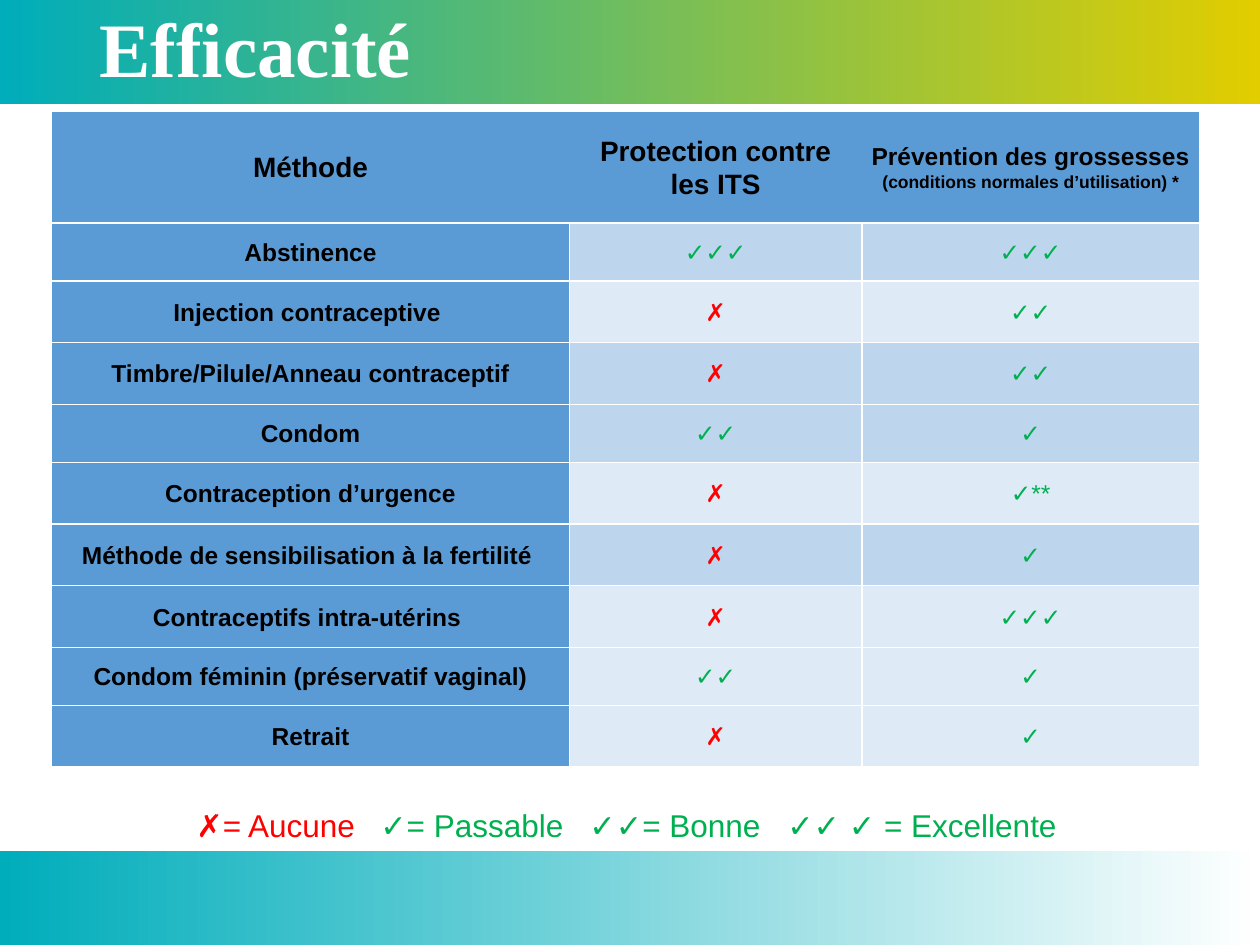
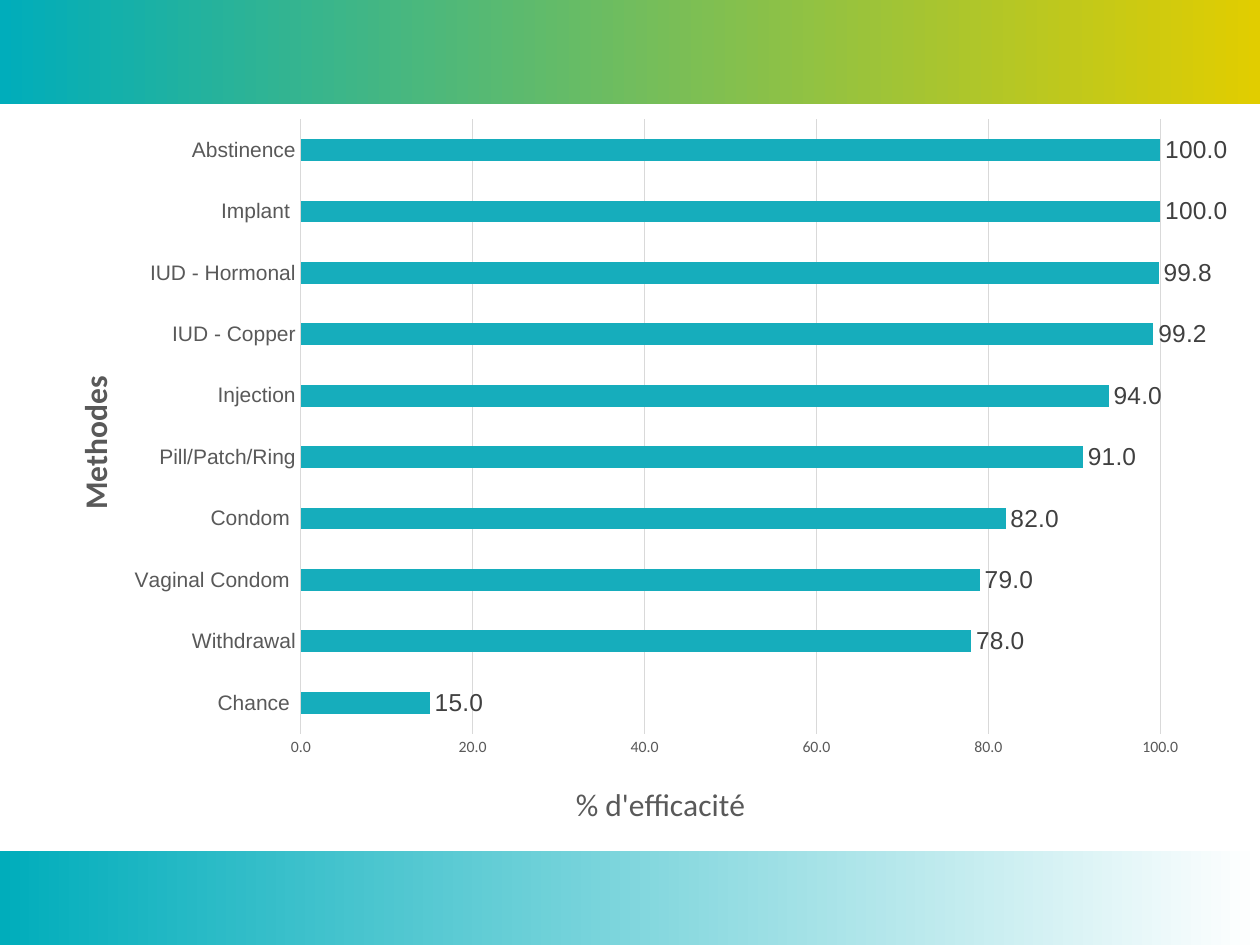
from dataclasses import dataclass
from lxml import etree
from pptx import Presentation
from pptx.chart.data import CategoryChartData
from pptx.dml.color import RGBColor
from pptx.enum import chart as charts, shapes, text
from pptx.oxml import ns, parse_xml
from pptx.util import Inches, Pt

TEAL, YELLOW, WHITE, BLACK = "00ADBB", "E1CD00", "FFFFFF", "000000"
BLUE, BLUE_MID, BLUE_PALE = "5B9BD5", "BDD6EE", "DEEAF6"
GREEN, RED = "00B050", "FF0000"
BAR_TEAL, GREY, LABEL_GREY, GRID_GREY = "16ADBC", "595959", "404040", "D9D9D9"
BODY, HEADING, CHART_FONT = "Arial", "Times New Roman", "Calibri"
CENTER = text.PP_ALIGN.CENTER


@dataclass(frozen=True)
class Band:
    top: float
    height: float
    end_color: str


@dataclass(frozen=True)
class Span:
    words: str
    size: float = 14
    color: str = BLACK
    bold: bool = False
    font: str = BODY


@dataclass(frozen=True)
class Method:
    name: str
    infection_mark: str
    pregnancy_mark: str
    fill: str
    height: float = 0.49


BANDS = [Band(0, 0.83, YELLOW), Band(6.75, 0.75, WHITE)]
COLUMN_WIDTHS = [4.11, 2.32, 2.68]
HEADER_HEIGHT = 0.89
HEADERS = [
    [Span("Méthode", 16, bold=True)],
    [Span("Protection contre les ITS", 16, bold=True)],
    [Span("Prévention des grossesses", bold=True),
     Span("(conditions normales d’utilisation) *", 10, bold=True)],
]
METHODS = [
    Method("Abstinence", "✓✓✓", "✓✓✓", BLUE_MID, 0.46),
    Method("Injection contraceptive ", "✗", "✓✓", BLUE_PALE),
    Method("Timbre/Pilule/Anneau contraceptif", "✗", "✓✓", BLUE_MID),
    Method("Condom", "✓✓", "✓", BLUE_MID, 0.46),
    Method("Contraception d’urgence", "✗", "✓**", BLUE_PALE),
    Method("Méthode de sensibilisation à la fertilité ", "✗", "✓", BLUE_MID),
    Method("Contraceptifs intra-utérins ", "✗", "✓✓✓", BLUE_PALE),
    Method("Condom féminin (préservatif vaginal)", "✓✓", "✓", BLUE_PALE, 0.46),
    Method("Retrait", "✗", "✓", BLUE_PALE),
]
LEGEND = [("✗= Aucune", 1.05), ("✓= Passable", 2.51),
          ("✓✓= Bonne", 4.17), ("✓✓ ✓ = Excellente", 5.74)]
EFFECTIVENESS = {
    "Chance ": 15, "Withdrawal": 78, "Vaginal Condom ": 79, "Condom ": 82,
    "Pill/Patch/Ring": 91, "Injection": 94, "IUD - Copper": 99.2,
    "IUD - Hormonal": 99.8, "Implant ": 100, "Abstinence": 100,
}


def rgb(color: str) -> RGBColor:
    return RGBColor.from_string(color)


def mark_color(mark: str) -> str:
    return RED if mark.startswith("✗") else GREEN


def style_font(font, size: float, color: str, name: str, bold: bool = False) -> None:
    font.size, font.name, font.bold = Pt(size), name, bold
    font.color.rgb = rgb(color)


def add_span(para, span: Span) -> None:
    run = para.add_run()
    run.text = span.words
    style_font(run.font, span.size, span.color, span.font, span.bold)


def add_bands(page) -> None:
    for band in BANDS:
        box = page.shapes.add_shape(shapes.MSO_SHAPE.RECTANGLE, 0, Inches(band.top),
                                    Inches(10), Inches(band.height))
        box.shadow.inherit = False
        box.line.fill.background()
        box.fill.gradient()
        box.fill.gradient_angle = 0
        for stop, color in zip(box.fill.gradient_stops, (TEAL, band.end_color)):
            stop.color.rgb = rgb(color)


def add_page(deck):
    page = deck.slides.add_slide(deck.slide_layouts[6])
    add_bands(page)
    return page


def add_text_box(page, left: float, top: float, width: float, height: float):
    box = page.shapes.add_textbox(*map(Inches, (left, top, width, height)))
    box.text_frame.word_wrap = True
    return box.text_frame


def add_title(page, words: str) -> None:
    frame = add_text_box(page, 0.69, 0, 8.62, 0.83)
    frame.vertical_anchor = text.MSO_ANCHOR.MIDDLE
    para = frame.paragraphs[0]
    para.line_spacing = 0.9
    add_span(para, Span(words, 44, WHITE, True, HEADING))


def set_borders(cell, hidden: set[str]) -> None:
    properties = cell._tc.get_or_add_tcPr()
    for side in "LRTB":
        line = etree.SubElement(properties, ns.qn(f"a:ln{side}"), w=str(Pt(1)))
        if side in hidden:
            etree.SubElement(line, ns.qn("a:noFill"))
        else:
            fill = etree.SubElement(line, ns.qn("a:solidFill"))
            etree.SubElement(fill, ns.qn("a:srgbClr"), val=WHITE)


def fill_cell(cell, spans: list[Span], color: str, hidden: set[str] = frozenset()) -> None:
    set_borders(cell, hidden)
    cell.fill.solid()
    cell.fill.fore_color.rgb = rgb(color)
    cell.vertical_anchor = text.MSO_ANCHOR.MIDDLE
    cell.margin_left = cell.margin_right = Inches(0.07)
    cell.margin_top = cell.margin_bottom = 0
    para = cell.text_frame.paragraphs[0]
    para.alignment, para.line_spacing = CENTER, 1.07
    for index, span in enumerate(spans):
        if index:
            para.add_line_break()
        add_span(para, span)


def add_method_table(page) -> None:
    heights = [HEADER_HEIGHT] + [method.height for method in METHODS]
    table = page.shapes.add_table(len(heights), len(COLUMN_WIDTHS), Inches(0.41), Inches(0.88),
                                  Inches(sum(COLUMN_WIDTHS)), Inches(sum(heights))).table
    for column, width in zip(table.columns, COLUMN_WIDTHS):
        column.width = Inches(width)
    for row, height in zip(table.rows, heights):
        row.height = Inches(height)
    for index, (spans, hidden) in enumerate(zip(HEADERS, ("R", "LR", "L"))):
        fill_cell(table.cell(0, index), spans, BLUE, set(hidden))
    for index, method in enumerate(METHODS, 1):
        fill_cell(table.cell(index, 0), [Span(method.name, bold=True)], BLUE)
        for column, mark in enumerate((method.infection_mark, method.pregnancy_mark), 1):
            fill_cell(table.cell(index, column), [Span(mark, color=mark_color(mark))], method.fill)


def add_legend(page) -> None:
    frame = add_text_box(page, 0.41, 6.33, 9.11, 0.43)
    frame.auto_size = text.MSO_AUTO_SIZE.SHAPE_TO_FIT_TEXT
    para = frame.paragraphs[0]
    para.line_spacing = 1.07
    stops = etree.SubElement(para._p.get_or_add_pPr(), ns.qn("a:tabLst"))
    for words, position in LEGEND:
        etree.SubElement(stops, ns.qn("a:tab"), pos=str(Inches(position)), algn="l")
        add_span(para, Span("\t" + words, 18, mark_color(words)))


def place(element, index: int, **lengths: float) -> None:
    for previous in element.findall(ns.qn("c:layout")):
        element.remove(previous)
    layout = etree.Element(ns.qn("c:layout"))
    manual = etree.SubElement(layout, ns.qn("c:manualLayout"))
    if "w" in lengths:
        etree.SubElement(manual, ns.qn("c:layoutTarget"), val="inner")
    for axis in "xy":
        etree.SubElement(manual, ns.qn(f"c:{axis}Mode"), val="edge")
    for name, value in lengths.items():
        etree.SubElement(manual, ns.qn(f"c:{name}"), val=str(value))
    element.insert(index, layout)


def style_axis(axis, size: float, font: str, title: Span, x: float, y: float,
               rotation: int) -> None:
    axis.major_tick_mark = axis.minor_tick_mark = charts.XL_TICK_MARK.NONE
    style_font(axis.tick_labels.font, size, GREY, font)
    add_span(axis.axis_title.text_frame.paragraphs[0], title)
    element = axis.axis_title._element
    element.find(".//" + ns.qn("a:bodyPr")).set("rot", str(rotation * 60000))
    place(element, 1, x=x, y=y)


def style_line(line, color: str) -> None:
    line.color.rgb = rgb(color)
    line.width = Pt(0.75)


def add_effectiveness_chart(page) -> None:
    data = CategoryChartData(number_format="0.0")
    data.categories = list(EFFECTIVENESS)
    data.add_series("Series 1", list(EFFECTIVENESS.values()))
    chart = page.shapes.add_chart(charts.XL_CHART_TYPE.BAR_CLUSTERED, Inches(0.25), Inches(0.83),
                                  Inches(9.5), Inches(5.86), data).chart
    chart.has_legend = chart.has_title = False
    style_font(chart.font, 10, BLACK, CHART_FONT)
    space = chart._chartSpace
    space.find(ns.qn("c:chart")).addnext(parse_xml(
        f'<c:spPr {ns.nsdecls("c", "a")}><a:solidFill><a:srgbClr val="{WHITE}"/></a:solidFill>'
        "<a:ln><a:noFill/></a:ln></c:spPr>"))
    place(space.find(".//" + ns.qn("c:plotArea")), 0, x=0.225, y=0.02, w=0.754, h=0.832)

    plot = chart.plots[0]
    plot.gap_width, plot.vary_by_categories = 182, False
    bars = plot.series[0]
    bars.format.fill.solid()
    bars.format.fill.fore_color.rgb = rgb(BAR_TEAL)
    plot.has_data_labels = True
    labels = plot.data_labels
    labels.show_value = True
    labels.position = charts.XL_LABEL_POSITION.OUTSIDE_END
    labels.number_format, labels.number_format_is_linked = "0.0", False
    style_font(labels.font, 14, LABEL_GREY, BODY)

    names, values = chart.category_axis, chart.value_axis
    style_axis(names, 12, BODY, Span("Methodes", 18, GREY, True, CHART_FONT), 0.03, 0.36, -90)
    style_line(names.format.line, GRID_GREY)
    style_axis(values, 9, CHART_FONT, Span("% d'efficacité", 18, GREY, font=CHART_FONT),
               0.45, 0.91, 0)
    values.format.line.fill.background()
    values.minimum_scale, values.maximum_scale, values.major_unit = 0, 105, 20
    values.tick_labels.number_format = "0.0"
    values.tick_labels.number_format_is_linked = False
    style_line(values.major_gridlines.format.line, GRID_GREY)


def main() -> None:
    deck = Presentation()
    deck.slide_width, deck.slide_height = Inches(10), Inches(7.5)
    table_page = add_page(deck)
    add_title(table_page, "Efficacité")
    add_method_table(table_page)
    add_legend(table_page)
    add_effectiveness_chart(add_page(deck))
    deck.save("out.pptx")


if __name__ == "__main__":
    main()
